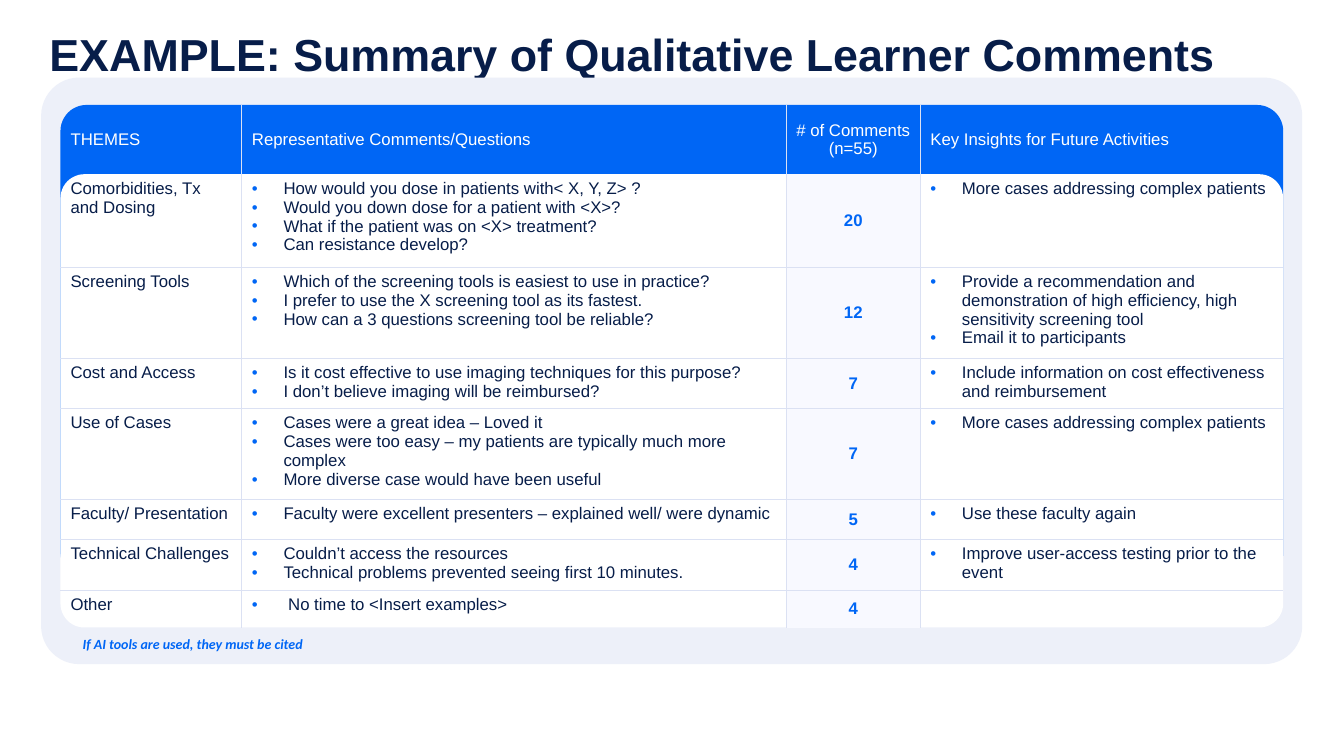
from collections import namedtuple
from dataclasses import dataclass

from lxml import etree
from pptx import Presentation
from pptx.dml.color import RGBColor
from pptx.enum.shapes import MSO_SHAPE
from pptx.enum.text import MSO_ANCHOR, PP_ALIGN
from pptx.oxml.ns import qn
from pptx.util import Pt

ROUNDED = MSO_SHAPE.ROUNDED_RECTANGLE
MIDDLE, TOP = MSO_ANCHOR.MIDDLE, MSO_ANCHOR.TOP
CENTER, LEFT = PP_ALIGN.CENTER, PP_ALIGN.LEFT
PLAIN_TABLE = "{2D5ABB26-0587-4C30-8999-92F81FD0307C}"
Box = namedtuple("Box", "left top width height")


@dataclass(frozen=True)
class Theme:
    navy: str = "071D49"
    blue: str = "0066F5"
    white: str = "FFFFFF"
    panel: str = "EDF0F9"
    rule: str = "DBE1F3"
    count: str = "F8F9FF"
    face: str = "Arial"
    note_face: str = "Calibri"
    title_size: int = 32
    table_size: int = 12
    note_size: int = 10


THEME = Theme()
COLUMNS = [129.6, 388.8, 95.8, 259.2]
ROWS = [49.4, 66.4, 65, 35.8, 65, 28.6, 36.4, 26.6]
HEADINGS = ["THEMES", "Representative Comments/Questions", "# of Comments (n=55)",
            "Key Insights for Future Activities"]
FINDINGS = [
    ("Comorbidities, Tx and Dosing",
     ["How would you dose in patients with< X, Y, Z> ?",
      "Would you down dose for a patient with <X>?",
      "What if the patient was on <X> treatment?",
      "Can resistance develop?"],
     20, ["More cases addressing complex patients"]),
    ("Screening Tools",
     ["Which of the screening tools is easiest to use in practice?",
      "I prefer to use the X screening tool as its fastest.",
      "How can a 3 questions screening tool be reliable?"],
     12, ["Provide a recommendation and demonstration of high efficiency, "
          "high sensitivity screening tool",
          "Email it to participants"]),
    ("Cost and Access",
     ["Is it cost effective to use imaging techniques for this purpose?",
      "I don’t believe imaging will be reimbursed?"],
     7, ["Include information on cost effectiveness and reimbursement"]),
    ("Use of Cases",
     ["Cases were a great idea – Loved it",
      "Cases were too easy – my patients are typically much more complex",
      "More diverse case would have been useful"],
     7, ["More cases addressing complex patients"]),
    ("Faculty/ Presentation",
     ["Faculty were excellent presenters – explained well/ were dynamic"],
     5, ["Use these faculty again"]),
    ("Technical Challenges",
     ["Couldn’t access the resources",
      "Technical problems prevented seeing first 10 minutes."],
     4, ["Improve user-access testing prior to the event"]),
    ("Other", [" No time to <Insert examples>"], 4, []),
]


def style(paragraph, face, size, color, bold=False, italic=False):
    for run in paragraph.runs:
        run.font.name = face
        run.font.size = Pt(size)
        run.font.color.rgb = RGBColor.from_string(color)
        run.font.bold = bold
        run.font.italic = italic


def add_label(slide, box, text):
    label = slide.shapes.add_textbox(*map(Pt, box))
    frame = label.text_frame
    frame.word_wrap = True
    frame.margin_left = frame.margin_right = frame.margin_top = frame.margin_bottom = 0
    frame.text = text
    return frame.paragraphs[0]


def add_card(slide, box, color, rounding):
    card = slide.shapes.add_shape(ROUNDED, *map(Pt, box))
    card.adjustments[0] = rounding
    card.shadow.inherit = False
    card.fill.solid()
    card.fill.fore_color.rgb = RGBColor.from_string(color)
    card.line.fill.background()


def add_bullet(paragraph):
    properties = paragraph._p.get_or_add_pPr()
    properties.set("marL", str(Pt(22.5)))
    properties.set("indent", str(-Pt(22.5)))
    tint = etree.SubElement(properties, qn("a:buClr"))
    etree.SubElement(tint, qn("a:srgbClr"), val=THEME.blue)
    etree.SubElement(properties, qn("a:buFont"), typeface=THEME.face)
    etree.SubElement(properties, qn("a:buChar"), char="•")


def rule_cell(cell, sides):
    properties = cell._tc.get_or_add_tcPr()
    for side in ("L", "R", "T", "B"):
        if side in sides:
            edge = etree.SubElement(properties, qn(f"a:ln{side}"), w=str(Pt(0.75)))
            paint = etree.SubElement(edge, qn("a:solidFill"))
            etree.SubElement(paint, qn("a:srgbClr"), val=THEME.rule)


def fill_cell(cell, lines, color, bold=False, bulleted=False, align=LEFT, anchor=TOP):
    cell.vertical_anchor = anchor
    cell.text_frame.text = "\n".join(lines)
    for paragraph in cell.text_frame.paragraphs:
        paragraph.alignment = align
        if lines and bulleted:
            add_bullet(paragraph)
        style(paragraph, THEME.face, THEME.table_size, color, bold)
        if not lines:
            etree.SubElement(paragraph._p, qn("a:endParaRPr"), sz=str(THEME.table_size * 100))


def add_findings(slide, box):
    frame = slide.shapes.add_table(len(ROWS), len(COLUMNS), *map(Pt, box))
    table = frame.table
    table.first_row = table.horz_banding = False
    table._tbl.tblPr.find(qn("a:tableStyleId")).text = PLAIN_TABLE
    for column, width in zip(table.columns, COLUMNS):
        column.width = Pt(width)
    for row, height in zip(table.rows, ROWS):
        row.height = Pt(height)

    last_row, last_column = len(ROWS) - 1, len(COLUMNS) - 1
    for r, row in enumerate(table.rows):
        for c, cell in enumerate(row.cells):
            sides = {"L": c > 0, "R": c < last_column, "T": r > 1, "B": 0 < r < last_row}
            rule_cell(cell, [side for side, drawn in sides.items() if drawn])
            if r and c == 2:
                cell.fill.solid()
                cell.fill.fore_color.rgb = RGBColor.from_string(THEME.count)
            else:
                cell.fill.background()

    for c, heading in enumerate(HEADINGS):
        fill_cell(table.cell(0, c), [heading], THEME.white,
                  align=CENTER if c == 2 else LEFT, anchor=MIDDLE)
    for r, (theme, comments, count, insights) in enumerate(FINDINGS, 1):
        fill_cell(table.cell(r, 0), [theme], THEME.navy)
        fill_cell(table.cell(r, 1), comments, THEME.navy, bulleted=True)
        fill_cell(table.cell(r, 2), [str(count)], THEME.blue, bold=True,
                  align=CENTER, anchor=MIDDLE)
        fill_cell(table.cell(r, 3), insights, THEME.navy, bulleted=True)


def draw_title(slide, box):
    title = add_label(slide, box, "EXAMPLE: Summary of Qualitative Learner Comments")
    title.line_spacing = 0.85
    style(title, THEME.face, THEME.title_size, THEME.navy, bold=True)


def draw_summary(slide, box):
    add_card(slide, box, THEME.panel, 0.065)
    grid = Box(box.left + 13.8, box.top + 19.6, sum(COLUMNS), sum(ROWS))
    add_card(slide, grid._replace(height=338.4), THEME.blue, 0.055)
    body = grid._replace(top=grid.top + ROWS[0], height=grid.height - ROWS[0])
    add_card(slide, body, THEME.white, 0.053)
    add_findings(slide, grid)
    note = add_label(slide, Box(box.left + 29.6, box.top + 398.2, 400, 21),
                     "If AI tools are used, they must be cited")
    style(note, THEME.note_face, THEME.note_size, THEME.blue, bold=True, italic=True)


def main():
    deck = Presentation()
    deck.slide_width, deck.slide_height = Pt(960), Pt(540)
    slide = deck.slides.add_slide(deck.slide_layouts[6])
    draw_title(slide, Box(35.3, 25.2, 913, 92.9))
    draw_summary(slide, Box(29.4, 55.4, 900.8, 419))
    deck.save("out.pptx")


if __name__ == "__main__":
    main()
